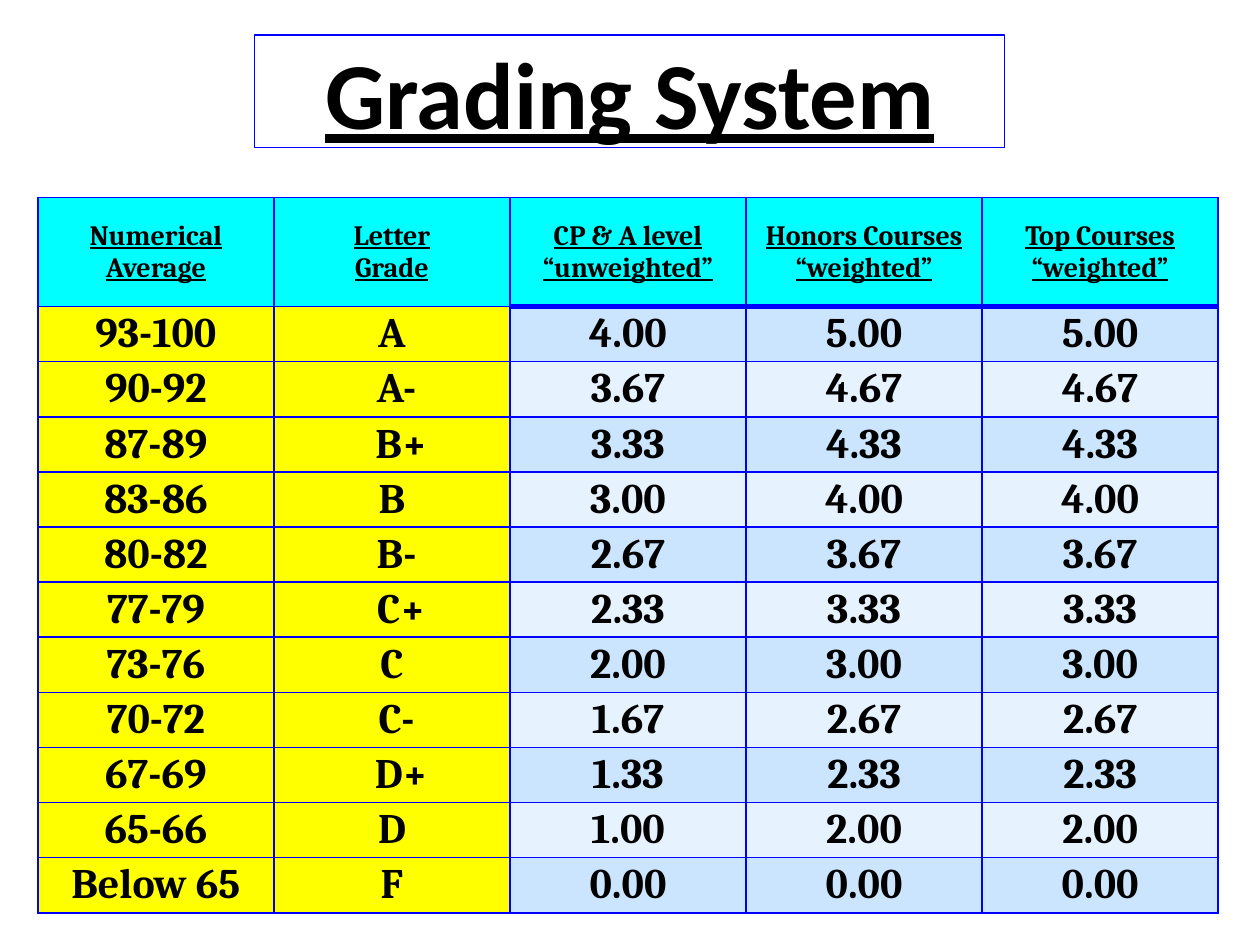
from lxml.etree import SubElement
from pptx import Presentation
from pptx.dml.color import RGBColor
from pptx.enum.shapes import MSO_SHAPE
from pptx.enum.text import MSO_ANCHOR, PP_ALIGN
from pptx.oxml.ns import qn
from pptx.util import Pt

COLORS = {"ink": "000000", "rule": "0000FF", "header": "00FFFF",
          "label": "FFFF00", "odd": "CCE5FE", "even": "E7F2FF"}
HEADERS = [["Numerical Average"], ["Letter", "Grade"],
           ["CP & A level", "“unweighted”"],
           ["Honors Courses", "“weighted”"], ["Top Courses", "“weighted”"]]
GRADES = [
    ("93-100", "A", "4.00", "5.00"), ("90-92", "A-", "3.67", "4.67"),
    ("87-89", "B+", "3.33", "4.33"), ("83-86", "B", "3.00", "4.00"),
    ("80-82", "B-", "2.67", "3.67"), ("77-79", "C+", "2.33", "3.33"),
    ("73-76", "C", "2.00", "3.00"), ("70-72", "C-", "1.67", "2.67"),
    ("67-69", "D+", "1.33", "2.33"), ("65-66", "D", "1.00", "2.00"),
    ("Below 65", "F", "0.00", "0.00"),
]
SIGN_INDENT = {"-": 5.3, "+": 10.6}


def color(name):
    """Return the named palette colour."""
    return RGBColor.from_string(COLORS[name])


def write(frame, lines, font, size, underline):
    """Fill a text frame with centred bold lines."""
    for index, line in enumerate(lines):
        para = frame.add_paragraph() if index else frame.paragraphs[0]
        para.alignment = PP_ALIGN.CENTER
        span = para.add_run()
        span.text = line
        span.font.name, span.font.size = font, Pt(size)
        span.font.bold, span.font.underline = True, underline
        span.font.color.rgb = color("ink")


def add_borders(cell, top, bottom):
    """Rule the four sides of a cell, with given top and bottom widths."""
    props = cell._tc.get_or_add_tcPr()
    for side, width in (("L", 1), ("R", 1), ("T", top), ("B", bottom)):
        line = SubElement(props, qn(f"a:ln{side}"), w=str(Pt(width)))
        fill = SubElement(line, qn("a:solidFill"))
        SubElement(fill, qn("a:srgbClr"), val=COLORS["rule"])


def add_title(page, left, top, width, height):
    """Place the outlined slide title."""
    box = page.shapes.add_shape(MSO_SHAPE.RECTANGLE, Pt(left), Pt(top), Pt(width), Pt(height))
    box.shadow.inherit = False
    box.fill.background()
    box.line.color.rgb = color("rule")
    box.line.width = Pt(0.75)
    box.text_frame.word_wrap = True
    box.text_frame.vertical_anchor = MSO_ANCHOR.MIDDLE
    write(box.text_frame, ["Grading System"], "Calibri", 54, True)


def fill_cell(cell, row, column, lines):
    """Style one grade table cell and write its lines."""
    cell.vertical_anchor = MSO_ANCHOR.MIDDLE
    cell.margin_left = Pt(5 + SIGN_INDENT.get(lines[0][-1], 0))
    cell.margin_right = Pt(5)
    cell.margin_top = cell.margin_bottom = Pt(0)
    write(cell.text_frame, lines, "Cambria", 24 if row else 16, row == 0)
    thick = column >= 2
    add_borders(cell, 3 if thick and row == 1 else 1, 3 if thick and row == 0 else 1)
    band = "label" if column < 2 else "odd" if row % 2 else "even"
    cell.fill.solid()
    cell.fill.fore_color.rgb = color(band if row else "header")


def add_grades(page, left, top, width, height):
    """Place the grade table with a tall header and equal body rows."""
    body = [[[text] for text in (*grade, grade[-1])] for grade in GRADES]
    rows = [HEADERS] + body
    table = page.shapes.add_table(len(rows), len(HEADERS), Pt(left), Pt(top),
                                  Pt(width), Pt(height)).table
    header_height = 62.4
    for column in table.columns:
        column.width = Pt(width / len(HEADERS))
    for row, texts in enumerate(rows):
        table.rows[row].height = Pt((height - header_height) / len(body) if row else header_height)
        for column, lines in enumerate(texts):
            fill_cell(table.cell(row, column), row, column, lines)


def main():
    """Build and save the grading slide."""
    deck = Presentation()
    deck.slide_width, deck.slide_height = Pt(720), Pt(540)
    page = deck.slides.add_slide(deck.slide_layouts[6])
    add_grades(page, 21.6, 112.8, 674.6, 409)
    add_title(page, 145.6, 20, 428.6, 64.2)
    deck.save("out.pptx")


if __name__ == "__main__":
    main()
